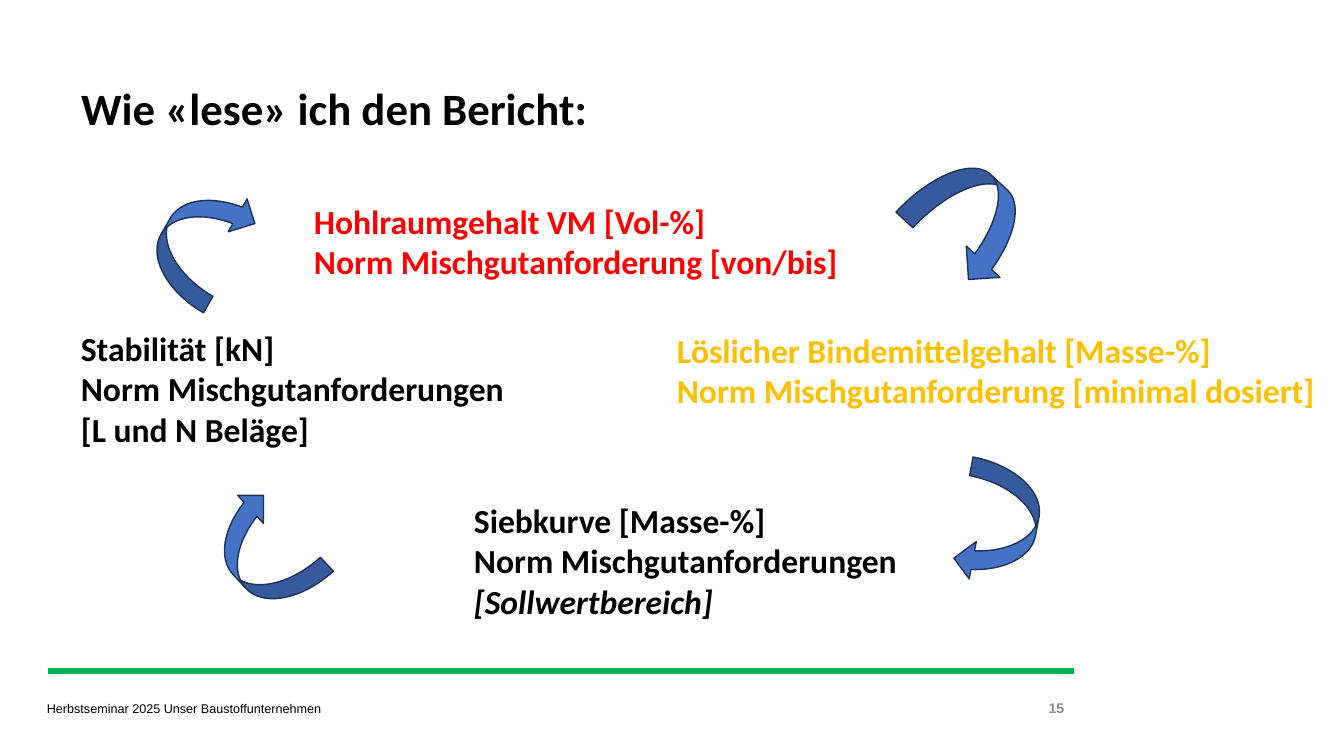
"""Build the slide on how to read the test report."""
from lxml import etree
from pptx import Presentation
from pptx import util as u
from pptx.dml.color import RGBColor
from pptx.enum import shapes, text
from pptx.oxml.ns import qn

PX = 914400 / 100.8
SIZE = (1344, 756)
BLACK, RED, AMBER, GREEN = "000000", "FF0000", "FFC000", "00B050"
GREY, BLUE, NAVY = "8C8C8C", "4472C4", "1E3256"

TITLE = ("Wie «lese» ich den Bericht:", (71, 76, 785, 95))
FOOTER = ("Herbstseminar 2025 Unser Baustoffunternehmen", (37, 696, 666, 25))
NUMBER = ("15", (772, 688, 302, 40))
RULE = (48, 671, 1074, 671)
TOPICS = [
    ((304, 196, 652, 92), RED,
     [["Hohlraumgehalt VM [Vol-%]"], ["Norm Mischgutanforderung [von/bis]"]]),
    ((667, 325, 676, 92), AMBER,
     [["Löslicher Bindemittelgehalt [Masse-%]"],
      ["Norm Mischgutanforderung [minimal dosiert]"]]),
    ((464, 495, 538, 132), BLACK,
     [["Siebkurve [Masse-%]"],
      ["Norm Mischgutanforderungen ", "[Sollwertbereich]"]]),
    ((71, 323, 471, 173), BLACK,
     [["Stabilität [kN]"], ["Norm Mischgutanforderungen [L und N Beläge]"]]),
]
ITALIC = "[Sollwertbereich]"
ARROWS = [
    ((911, 174, 122, 92), 42.9),
    ((938, 486, 122, 76), 100.8),
    ((203, 514, 122, 76), 227.4),
    ((140, 203, 122, 76), 299.9),
]


def emu(*values):
    return [u.Emu(round(v * PX)) for v in values]


def rgb(value):
    return RGBColor.from_string(value)


def write(sp, box, paragraphs, size, color=BLACK, font="Calibri", bold=True,
          align=text.PP_ALIGN.LEFT, anchor=text.MSO_ANCHOR.TOP):
    sp.left, sp.top, sp.width, sp.height = emu(*box)
    tf = sp.text_frame
    tf.word_wrap = True
    tf.auto_size = text.MSO_AUTO_SIZE.NONE
    tf.vertical_anchor = anchor
    for i, runs in enumerate(paragraphs):
        p = tf.add_paragraph() if i else tf.paragraphs[0]
        p.alignment, p.line_spacing = align, 1.0
        p.space_before = u.Pt(0)
        for words in runs:
            r = p.add_run()
            r.text = words
            r.font.name, r.font.size = font, u.Pt(size)
            r.font.bold, r.font.italic = bold, words == ITALIC
            r.font.color.rgb = rgb(color)


def add_rule(slide):
    line = slide.shapes.add_connector(shapes.MSO_CONNECTOR.STRAIGHT, *emu(*RULE))
    line.line.color.rgb = rgb(GREEN)
    line.line.width = u.Pt(5)
    etree.SubElement(line._element.spPr, qn("a:effectLst"))


def add_arrow(slide, box, angle):
    sp = slide.shapes.add_shape(shapes.MSO_SHAPE.CURVED_DOWN_ARROW, *emu(*box))
    sp.rotation = angle
    sp.shadow.inherit = False
    sp.fill.solid()
    sp.fill.fore_color.rgb = rgb(BLUE)
    sp.line.color.rgb = rgb(NAVY)
    sp.line.width = u.Pt(1)


def main():
    prs = Presentation()
    prs.slide_width, prs.slide_height = emu(*SIZE)
    slide = prs.slides.add_slide(prs.slide_layouts[5])

    def add_text(box, paragraphs, size, **style):
        write(slide.shapes.add_textbox(*emu(*box)), box, paragraphs, size, **style)

    add_rule(slide)
    add_text(FOOTER[1], [[FOOTER[0]]], 9, font="Arial", bold=False)
    add_text(NUMBER[1], [[NUMBER[0]]], 10, font="Arial", color=GREY,
             align=text.PP_ALIGN.RIGHT, anchor=text.MSO_ANCHOR.MIDDLE)
    write(slide.shapes.title, TITLE[1], [[TITLE[0]]], 32)
    for box, color, paragraphs in TOPICS:
        add_text(box, paragraphs, 24, color=color)
    for box, angle in ARROWS:
        add_arrow(slide, box, angle)
    prs.save("out.pptx")


if __name__ == "__main__":
    main()
